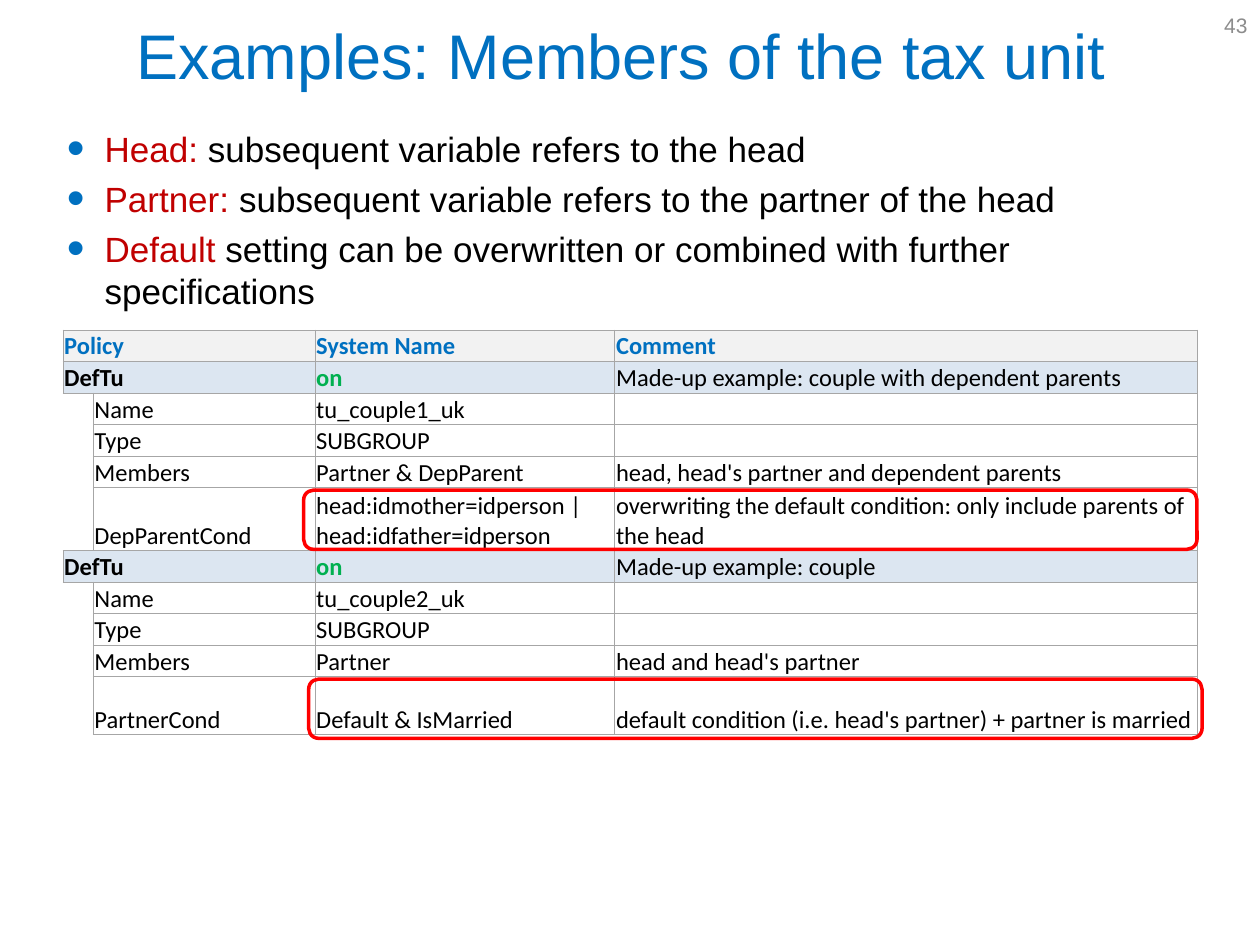
from lxml import etree
from pptx import Presentation
from pptx.dml.color import RGBColor
from pptx.enum.shapes import MSO_SHAPE
from pptx.enum.text import MSO_ANCHOR, MSO_AUTO_SIZE, PP_ALIGN
from pptx.oxml.ns import qn
from pptx.util import Inches, Pt

TOP, MIDDLE, BOTTOM = MSO_ANCHOR.TOP, MSO_ANCHOR.MIDDLE, MSO_ANCHOR.BOTTOM
LEFT, CENTER, RIGHT = PP_ALIGN.LEFT, PP_ALIGN.CENTER, PP_ALIGN.RIGHT
NO_AUTOFIT = MSO_AUTO_SIZE.NONE
ROUNDED = MSO_SHAPE.ROUNDED_RECTANGLE

BLUE = RGBColor(0x00, 0x70, 0xC0)
GREEN = RGBColor(0x00, 0xB0, 0x50)
DARK_RED = RGBColor(0xC0, 0x00, 0x00)
RED = RGBColor(0xFF, 0x00, 0x00)
BLACK = RGBColor(0x00, 0x00, 0x00)
WHITE = RGBColor(0xFF, 0xFF, 0xFF)
GRAY = RGBColor(0x8C, 0x8C, 0x8C)
BORDER = RGBColor(0xA6, 0xA6, 0xA6)
HEADER_FILL = RGBColor(0xF2, 0xF2, 0xF2)
POLICY_FILL = RGBColor(0xDC, 0xE6, 0xF1)

# Boxes: left, top, width, height in inches
NUMBER_BOX = (7.67, 0, 2.33, 0.4)
TITLE_BOX = (0.43, 0.08, 9, 0.71)
BODY_BOX = (0.43, 0.96, 9.23, 4.95)
TABLE_LEFT, TABLE_TOP = 0.5, 2.62
COLUMNS = (0.24, 1.76, 2.38, 4.62)
ROW, CONDITION_ROWS = 0.25, {5: 0.5, 10: 0.46}

BULLETS = [
    ("Head: ", "subsequent variable refers to the head"),
    ("Partner: ", "subsequent variable refers to the partner of the head"),
    ("Default ", "setting can be overwritten or combined with further specifications"),
]
HEADER, POLICY, PARAMETER = "header", "policy", "parameter"
ROWS = [
    (HEADER, "Policy", "System Name", "Comment"),
    (POLICY, "DefTu", "on", "Made-up example: couple with dependent parents"),
    (PARAMETER, "Name", "tu_couple1_uk", ""),
    (PARAMETER, "Type", "SUBGROUP", ""),
    (PARAMETER, "Members", "Partner & DepParent", "head, head's partner and dependent parents"),
    (PARAMETER, "DepParentCond", "head:idmother=idperson | head:idfather=idperson",
     "overwriting the default condition: only include parents of the head"),
    (POLICY, "DefTu", "on", "Made-up example: couple"),
    (PARAMETER, "Name", "tu_couple2_uk", ""),
    (PARAMETER, "Type", "SUBGROUP", ""),
    (PARAMETER, "Members", "Partner", "head and head's partner"),
    (PARAMETER, "PartnerCond", "Default & IsMarried",
     "default condition (i.e. head's partner) + partner is married"),
]
HEIGHTS = [CONDITION_ROWS.get(index, ROW) for index in range(len(ROWS))]
# Fill, anchor and (colour, bold) of the three texts
ROW_STYLES = {
    HEADER: (HEADER_FILL, MIDDLE, [(BLUE, True)] * 3),
    POLICY: (POLICY_FILL, MIDDLE, [(BLACK, True), (GREEN, True), (BLACK, False)]),
    PARAMETER: (WHITE, BOTTOM, [(BLACK, False)] * 3),
}


def add_span(para, text, size=20, font="Arial", color=BLACK, bold=False):
    span = para.add_run()
    span.text = text
    span.font.size, span.font.name, span.font.bold = Pt(size), font, bold
    span.font.color.rgb = color


def place(shape, box, anchor):
    shape.left, shape.top, shape.width, shape.height = map(Inches, box)
    frame = shape.text_frame
    frame.word_wrap, frame.auto_size, frame.vertical_anchor = True, NO_AUTOFIT, anchor
    return frame


def add_bullet(para):
    properties = para._p.get_or_add_pPr()
    properties.set("marL", str(Inches(0.3)))
    properties.set("indent", str(-Inches(0.3)))
    color = etree.SubElement(properties, qn("a:buClr"))
    etree.SubElement(color, qn("a:srgbClr"), val=str(BLUE))
    etree.SubElement(properties, qn("a:buSzPct"), val="145000")
    etree.SubElement(properties, qn("a:buFont"), typeface="Arial")
    etree.SubElement(properties, qn("a:buChar"), char="•")


def set_borders(cell, sides):
    properties = cell._tc.get_or_add_tcPr()
    for side in "LRTB":
        line = etree.SubElement(properties, qn("a:ln" + side), w=str(Pt(0.5)))
        if side in sides:
            fill = etree.SubElement(line, qn("a:solidFill"))
            etree.SubElement(fill, qn("a:srgbClr"), val=str(BORDER))
        else:
            etree.SubElement(line, qn("a:noFill"))


def fill_cell(cell, text, fill, anchor, color=BLACK, bold=False, sides="LRTB"):
    set_borders(cell, sides)
    cell.fill.solid()
    cell.fill.fore_color.rgb = fill
    cell.vertical_anchor = anchor
    cell.margin_left = cell.margin_right = cell.margin_top = Inches(0.01)
    cell.margin_bottom = 0
    para = cell.text_frame.paragraphs[0]
    if text:
        add_span(para, text, size=14, font="Calibri", color=color, bold=bold)
    else:
        # Keeps empty cells from stretching their row
        etree.SubElement(para._p, qn("a:endParaRPr"), sz="1400")


def build_heading(page):
    para = place(page.shapes.title, TITLE_BOX, MIDDLE).paragraphs[0]
    para.alignment = CENTER
    add_span(para, "Examples: Members of the tax unit", size=36, color=BLUE)

    number = page.shapes.add_textbox(0, 0, 0, 0)
    para = place(number, NUMBER_BOX, MIDDLE).paragraphs[0]
    para.alignment = RIGHT
    add_span(para, "43", size=12, color=GRAY)


def build_bullets(page):
    frame = place(page.placeholders[1], BODY_BOX, TOP)
    for index, (term, explanation) in enumerate(BULLETS):
        para = frame.add_paragraph() if index else frame.paragraphs[0]
        add_bullet(para)
        para.alignment = LEFT
        para.space_before = Pt(4.6 if index else 0)
        add_span(para, term, color=DARK_RED)
        add_span(para, explanation)


def build_table(page):
    box = (TABLE_LEFT, TABLE_TOP, sum(COLUMNS), sum(HEIGHTS))
    table = page.shapes.add_table(len(ROWS), len(COLUMNS), *map(Inches, box)).table
    table.first_row = table.horz_banding = False
    for column, width in zip(table.columns, COLUMNS):
        column.width = Inches(width)
    for index, (kind, *texts) in enumerate(ROWS):
        table.rows[index].height = Inches(HEIGHTS[index])
        fill, anchor, styles = ROW_STYLES[kind]
        cells = [table.cell(index, column) for column in range(len(COLUMNS))]
        if kind == PARAMETER:
            # Indent column: open on the left, closed only next to a policy row
            above = ROWS[index - 1][0] == POLICY
            below = index + 1 < len(ROWS) and ROWS[index + 1][0] == POLICY
            sides = "R" + "T" * above + "B" * below
            fill_cell(cells[0], "", fill, anchor, sides=sides)
            cells = cells[1:]
        else:
            fill_cell(cells[1], "", fill, anchor)
            cells[0].merge(cells[1])
            cells = [cells[0], *cells[2:]]
        for cell, text, (color, bold) in zip(cells, texts, styles):
            fill_cell(cell, text, fill, anchor, color=color, bold=bold)


def build_highlights(page):
    # A red frame around each condition row
    width = sum(COLUMNS[2:]) + 0.09
    for row, left in zip(CONDITION_ROWS, (2.41, 2.45)):
        top = TABLE_TOP + sum(HEIGHTS[:row]) + 0.02
        frame = page.shapes.add_shape(ROUNDED, *map(Inches, (left, top, width, 0.47)))
        frame.shadow.inherit = False
        frame.fill.background()
        frame.line.color.rgb = RED
        frame.line.width = Pt(2)


def main():
    deck = Presentation()
    deck.slide_width, deck.slide_height = Inches(10), Inches(7.5)
    page = deck.slides.add_slide(deck.slide_layouts[1])
    build_heading(page)
    build_bullets(page)
    build_table(page)
    build_highlights(page)
    deck.save("out.pptx")


if __name__ == "__main__":
    main()
